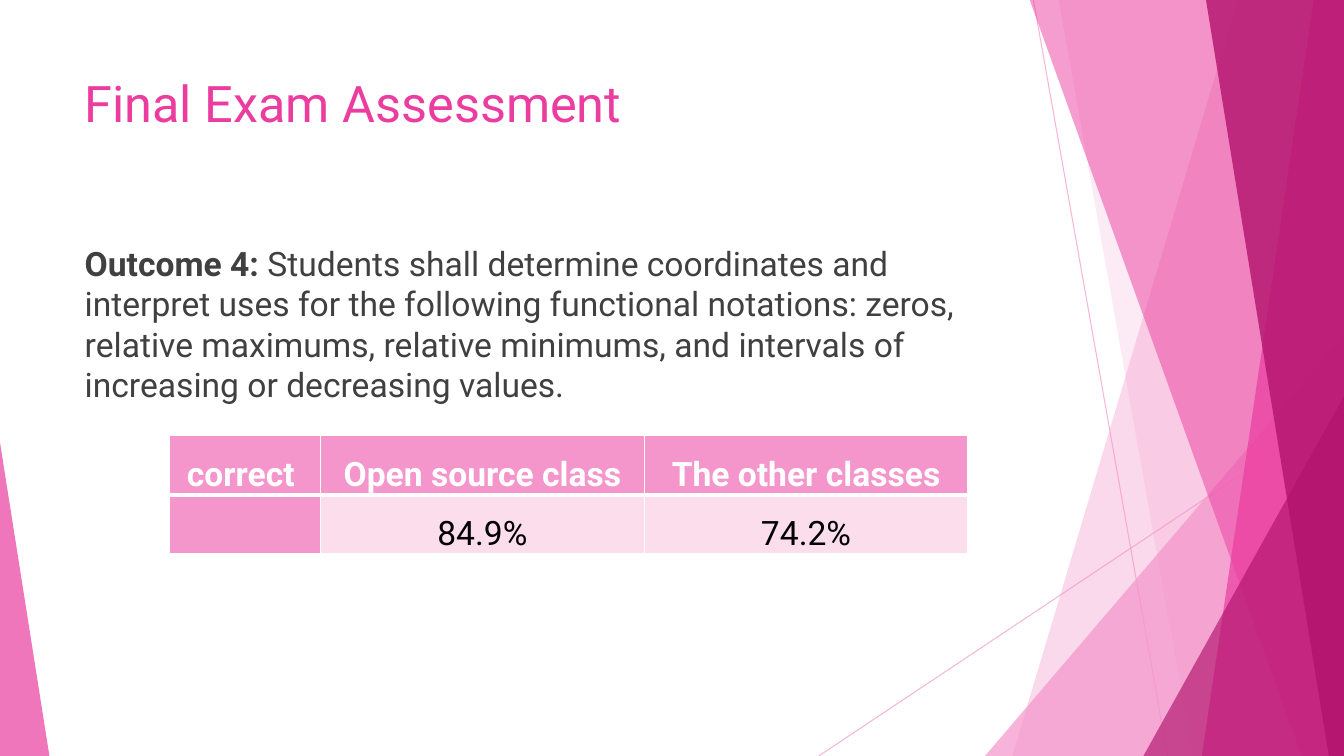
"""Build the Final Exam Assessment slide with its result table."""
import dataclasses
import pptx
import pptx.dml.color
import pptx.enum.shapes
import pptx.enum.text
import pptx.oxml
import pptx.oxml.ns
import pptx.util

Inches = pptx.util.Inches
Pt = pptx.util.Pt
rgb = pptx.dml.color.RGBColor.from_string
qn = pptx.oxml.ns.qn
space = pptx.oxml.ns.nsdecls("a")


@dataclasses.dataclass(frozen=True)
class Theme:
    font: str = "Roboto"
    pale: str = "FBDDEC"
    light: str = "F496CB"
    pink: str = "EB3D9F"
    deep: str = "B2136D"
    dark: str = "404040"
    black: str = "000000"
    white: str = "FFFFFF"
    head: int = 36
    text: int = 24


theme = Theme()


def write(para, words, color, size=theme.text, bold=False):
    run = para.add_run()
    run.text = words
    run.font.name = theme.font
    run.font.size = Pt(size)
    run.font.bold = bold
    run.font.color.rgb = rgb(color)


def tint(shape, color, alpha):
    shape.shadow.inherit = False
    shape.line.fill.background()
    shape.fill.solid()
    shape.fill.fore_color.rgb = rgb(color)
    tone = shape.fill._xPr.find(".//" + qn("a:srgbClr"))
    tone.append(pptx.oxml.parse_xml(f'<a:alpha {space} val="{alpha * 1000}"/>'))


deck = pptx.Presentation()
deck.slide_width = Inches(13.33)
deck.slide_height = Inches(7.5)
slide = deck.slides.add_slide(deck.slide_layouts[1])
shapes = slide.shapes
title, body = slide.placeholders

for start, end in [((10.25, 0), (11.58, 7.5)), ((13.33, 4.03), (8.12, 7.5))]:
    ray = shapes.add_connector(
        pptx.enum.shapes.MSO_CONNECTOR.STRAIGHT,
        *[Inches(n) for n in start + end])
    ray.line.width = Pt(0.75)
    ray.line.color.rgb = rgb(theme.light)
    tone = ray.line._ln.find(".//" + qn("a:srgbClr"))
    tone.append(pptx.oxml.parse_xml(f'<a:alpha {space} val="70000"/>'))
    ray._element.spPr.append(pptx.oxml.parse_xml(f"<a:effectLst {space}/>"))

right = 13.33
low = 7.5
bands = [
    ([(12.28, -0.01), (right, -0.01), (right, low), (10.04, low)], theme.light, 36),
    ([(10.5, -0.01), (right, -0.01), (right, low), (11.83, low)], theme.light, 20),
    ([(right, 3.33), (right, low), (9.77, low)], theme.light, 72),
    ([(10.21, -0.01), (right, -0.01), (right, low), (12.91, low)], theme.pink, 50),
    ([(13.03, -0.01), (right, -0.01), (right, low), (11.92, low)], theme.pink, 70),
    ([(11.96, -0.01), (right, -0.01), (right, low), (13.18, low)], theme.deep, 80),
    ([(right, 3.93), (right, low), (11.34, low)], theme.deep, 66),
    ([(0, 4.39), (0.49, low), (0, low)], theme.pink, 70),
]
for points, color, alpha in bands:
    spots = [(Inches(x), Inches(y)) for x, y in points]
    pen = shapes.build_freeform(*spots[0])
    pen.add_line_segments(spots[1:], close=True)
    tint(pen.convert_to_shape(), color, alpha)

for holder, top, height in [(title, 0.67, 1.44), (body, 2.36, 4.24)]:
    holder.left, holder.top = Inches(0.74), Inches(top)
    holder.width, holder.height = Inches(9.4), Inches(height)
    frame = holder.text_frame
    frame.word_wrap = True
    frame.auto_size = pptx.enum.text.MSO_AUTO_SIZE.NONE
    frame.vertical_anchor = pptx.enum.text.MSO_ANCHOR.TOP
    frame.paragraphs[0].alignment = pptx.enum.text.PP_ALIGN.LEFT
    shapes._spTree.append(holder._element)

write(title.text_frame.paragraphs[0], "Final Exam Assessment", theme.pink, theme.head)
para = body.text_frame.paragraphs[0]
para.space_before = Pt(10)
props = para._p.get_or_add_pPr()
props.set("marL", "0")
props.set("indent", "0")
props.append(pptx.oxml.parse_xml(f"<a:buNone {space}/>"))
write(para, "Outcome 4: ", theme.dark, bold=True)
write(para, "Students shall determine coordinates and interpret uses for the "
      "following functional notations: zeros, relative maximums, relative "
      "minimums, and intervals of increasing or decreasing values.", theme.dark)

rows = [["correct ", "Open source class", "The other classes"],
        ["", "84.9%", "74.2%"]]
grid = shapes.add_table(2, 3, Inches(1.68), Inches(4.32),
                        Inches(7.92), Inches(1.16)).table
for col, width in zip(grid.columns, [1.5, 3.21, 3.21]):
    col.width = Inches(width)
for r, row in enumerate(rows):
    for c, words in enumerate(row):
        cell = grid.cell(r, c)
        cell.margin_left = cell.margin_right = Inches(0.07)
        cell.margin_top = cell.margin_bottom = 0
        edge = cell._tc.get_or_add_tcPr()
        for side in "LRTB":
            thick = 3 if (r, side) in [(0, "B"), (1, "T")] else 1
            edge.append(pptx.oxml.parse_xml(
                f'<a:ln{side} {space} w="{Pt(thick)}"><a:solidFill>'
                f'<a:srgbClr val="{theme.white}"/></a:solidFill></a:ln{side}>'))
        first = r == 0
        cell.fill.solid()
        cell.fill.fore_color.rgb = rgb(theme.light if first or c == 0 else theme.pale)
        if words:
            para = cell.text_frame.paragraphs[0]
            para.alignment = pptx.enum.text.PP_ALIGN.CENTER
            para.line_spacing = 1.5
            write(para, words, theme.white if first else theme.black, bold=first)

deck.save("out.pptx")
